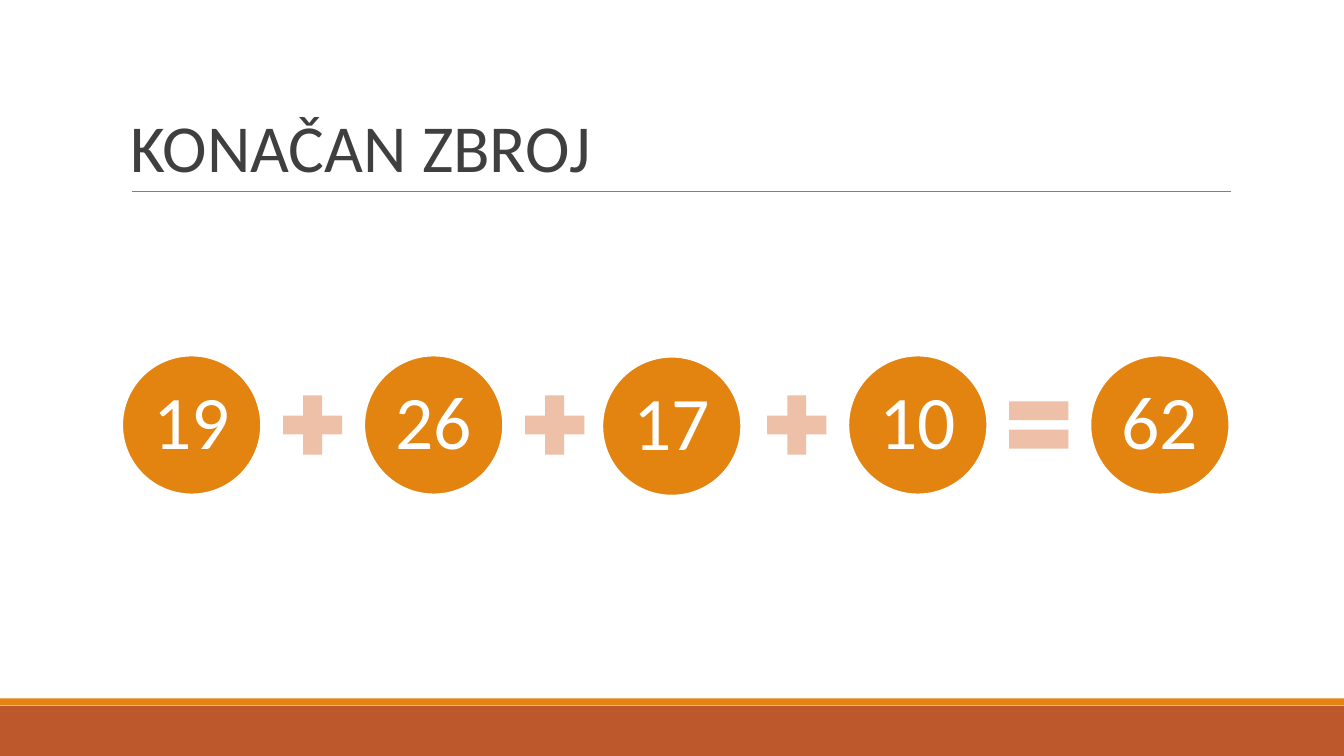
from lxml import etree
from pptx import Presentation
from pptx.dml.color import RGBColor
from pptx.enum.shapes import MSO_CONNECTOR, MSO_SHAPE
from pptx.enum.text import MSO_ANCHOR, MSO_AUTO_SIZE, PP_ALIGN
from pptx.oxml.ns import qn
from pptx.util import Cm, Pt

RECT, OVAL = MSO_SHAPE.RECTANGLE, MSO_SHAPE.OVAL
PLUS, EQUAL = MSO_SHAPE.MATH_PLUS, MSO_SHAPE.MATH_EQUAL
STRAIGHT = MSO_CONNECTOR.STRAIGHT
BOTTOM, MIDDLE = MSO_ANCHOR.BOTTOM, MSO_ANCHOR.MIDDLE
LEFT, CENTER = PP_ALIGN.LEFT, PP_ALIGN.CENTER
NO_FIT = MSO_AUTO_SIZE.NONE

RUST = RGBColor(0xBD, 0x58, 0x2C)
AMBER = RGBColor(0xE4, 0x83, 0x12)
ORANGE = RGBColor(0xE3, 0x83, 0x10)
PEACH = RGBColor(0xEE, 0xC0, 0xA7)
GREY = RGBColor(0x7F, 0x7F, 0x7F)
DARK = RGBColor(0x3F, 0x3F, 0x3F)
WHITE = RGBColor(0xFF, 0xFF, 0xFF)

FONT = "Calibri"
WIDTH, HEIGHT = 33.87, 19.05
TERMS = [("19", PLUS), ("26", PLUS), ("17", PLUS), ("10", EQUAL), ("62", None)]
NUDGES = {"17": (-0.1, 0.03)}


def add_filled(s, kind, x, y, w, h, color):
    """Add a borderless filled shape and return it."""
    sp = s.shapes.add_shape(kind, Cm(x), Cm(y), Cm(w), Cm(h))
    sp.shadow.inherit = False
    sp.fill.solid()
    sp.fill.fore_color.rgb = color
    sp.line.fill.background()
    return sp


def write(tf, text, size, color, align, anchor, spacing):
    """Write one formatted line into a text frame."""
    tf.word_wrap = True
    tf.auto_size = NO_FIT
    tf.vertical_anchor = anchor
    p = tf.paragraphs[0]
    p.alignment = align
    p.line_spacing = spacing
    r = p.add_run()
    r.text = text
    r.font.name = FONT
    r.font.size = Pt(size)
    r.font.color.rgb = color


def add_footer(s, x, y, w, h):
    """Add the two-coloured band along the foot of the slide."""
    stripe, band = 0.17, 1.27
    add_filled(s, RECT, x, y + h - band, w, band, RUST)
    add_filled(s, RECT, x, y, w, stripe, AMBER)


def add_heading(s, x, y, w, h):
    """Place the title with a thin rule beneath it."""
    title = s.shapes.title
    title.left, title.top, title.width, title.height = Cm(x), Cm(y), Cm(w), Cm(h)
    tf = title.text_frame
    tf.margin_left = tf.margin_right = Cm(0.25)
    tf.margin_top = tf.margin_bottom = Cm(0.13)
    write(tf, "KONAČAN ZBROJ", 48, DARK, LEFT, BOTTOM, 0.85)
    rule = s.shapes.add_connector(
        STRAIGHT, Cm(x + 0.28), Cm(y + h), Cm(x + w + 0.02), Cm(y + h))
    rule.line.color.rgb = GREY
    rule.line.width = Pt(0.75)
    etree.SubElement(rule._element.spPr, qn("a:effectLst"))


def add_sum(s, x, y, w, h):
    """Lay out the circled terms and the signs between them."""
    sign_size = 2.03
    pitch = (w - h) / (len(TERMS) - 1)
    gap = (pitch - h - sign_size) / 2
    for i, (number, sign) in enumerate(TERMS):
        left = x + i * pitch
        dx, dy = NUDGES.get(number, (0, 0))
        sp = add_filled(s, OVAL, left + dx, y + dy, h, h, ORANGE)
        sp.line.color.rgb = WHITE
        sp.line.width = Pt(1.25)
        tf = sp.text_frame
        tf.margin_left = tf.margin_right = Cm(0.18)
        tf.margin_top = tf.margin_bottom = Cm(0.18)
        write(tf, number, 54, WHITE, CENTER, MIDDLE, 0.9)
        if sign is not None:
            add_filled(s, sign, left + h + gap, y + (h - sign_size) / 2,
                       sign_size, sign_size, PEACH)


def main():
    """Build the slide and save it."""
    prs = Presentation()
    prs.slide_width, prs.slide_height = Cm(WIDTH), Cm(HEIGHT)
    s = prs.slides.add_slide(prs.slide_layouts[5])
    add_footer(s, 0, 17.6, WIDTH, 1.45)
    add_heading(s, 3.05, 0.79, 27.94, 4.04)
    add_sum(s, 3.08, 8.96, 27.9, 3.5)
    prs.save("out.pptx")


if __name__ == "__main__":
    main()
